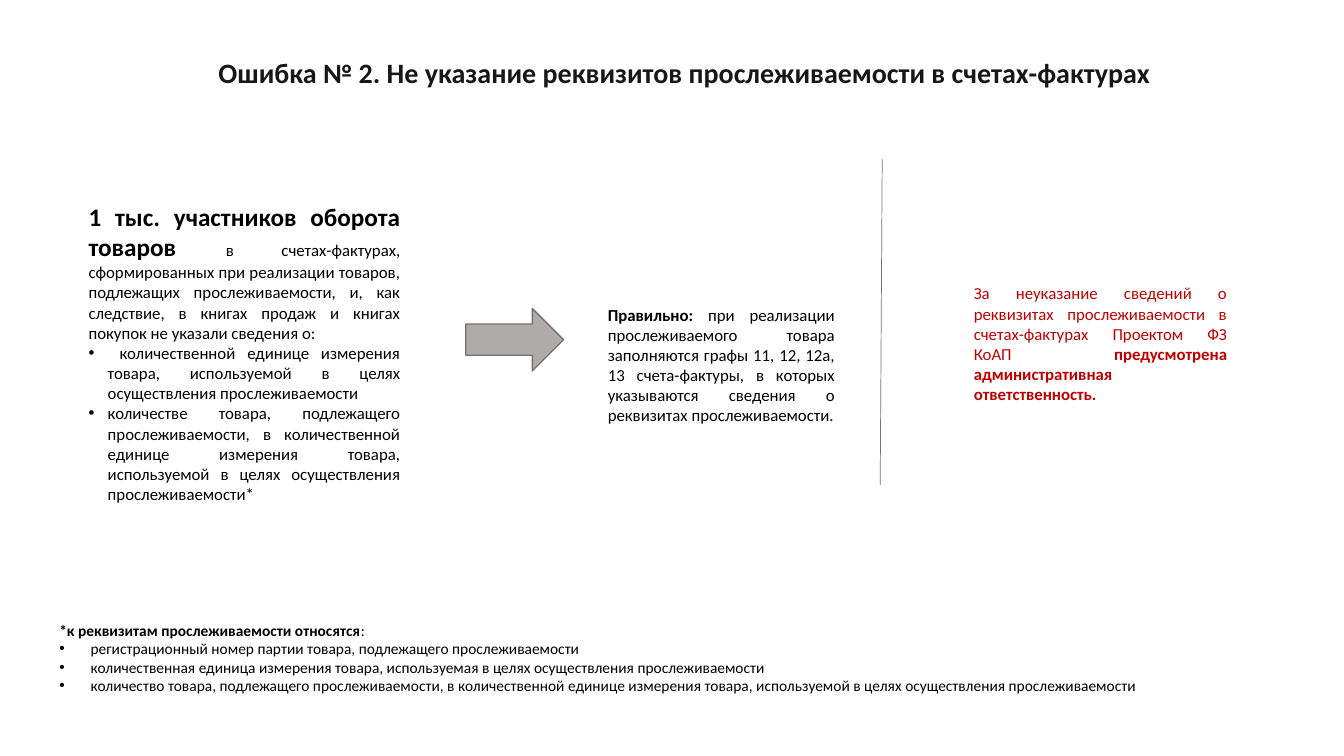
import pptx
import pptx.util
import pptx.oxml
import pptx.dml.color
import pptx.enum.text
import pptx.enum.shapes
import lxml.etree
from dataclasses import dataclass

Inches, Pt = pptx.util.Inches, pptx.util.Pt
ALIGN = pptx.enum.text.PP_ALIGN
ANCHOR = pptx.enum.text.MSO_ANCHOR


@dataclass(frozen=True)
class Theme:
    font: str = "Calibri"
    title: str = "181717"
    text: str = "000000"
    alert: str = "C00000"
    arrow: str = "AFABAB"
    line: str = "767171"
    title_size: int = 20
    lead_size: int = 18
    body_size: int = 12
    note_size: int = 11


T = Theme()

# Content: a paragraph is (bulleted, runs), a run is (text, bold, size)
TITLE = "Ошибка № 2. Не указание реквизитов прослеживаемости в счетах-фактурах"
MISTAKE = [
    (False, [("1 тыс. участников оборота товаров ", True, T.lead_size),
             ("в счетах-фактурах, сформированных при реализации товаров, подлежащих "
              "прослеживаемости, и, как следствие, в книгах продаж и книгах покупок "
              "не указали сведения о:", False, T.body_size)]),
    (True, [(" количественной единице измерения товара, используемой в целях "
             "осуществления прослеживаемости", False, T.body_size)]),
    (True, [("количестве товара, подлежащего прослеживаемости, в количественной "
             "единице измерения товара, используемой в целях осуществления "
             "прослеживаемости*", False, T.body_size)]),
]
CORRECT = [
    (False, [("Правильно:", True, T.body_size),
             (" при реализации прослеживаемого товара заполняются графы 11, 12, 12а, "
              "13 счета-фактуры, в которых указываются сведения о реквизитах "
              "прослеживаемости.", False, T.body_size)]),
]
PENALTY = [
    (False, [("За неуказание сведений о реквизитах прослеживаемости в счетах-фактурах "
              "Проектом ФЗ КоАП ", False, T.body_size),
             ("предусмотрена административная ответственность.", True, T.body_size)]),
]
DETAILS = [
    "регистрационный номер партии товара, подлежащего прослеживаемости",
    "количественная единица измерения товара, используемая в целях осуществления "
    "прослеживаемости",
    "количество товара, подлежащего прослеживаемости, в количественной единице "
    "измерения товара, используемой в целях осуществления прослеживаемости",
]
FOOTNOTE = [
    (False, [("*к реквизитам прослеживаемости относятся", True, T.note_size),
             (":", False, T.note_size)]),
] + [(True, [(text, False, T.note_size)]) for text in DETAILS]

# Box (left, top, width, height), paragraphs, colour, alignment, bullet indent
TEXTS = [
    ((0.78, 1.95, 3.29, 3.13), MISTAKE, T.text, ALIGN.JUSTIFY, 0.19),
    ((5.93, 2.97, 2.45, 1.31), CORRECT, T.text, ALIGN.JUSTIFY, 0),
    ((9.56, 2.76, 2.71, 1.31), PENALTY, T.alert, ALIGN.JUSTIFY, 0),
    ((0.49, 6.11, 11.49, 0.84), FOOTNOTE, T.text, ALIGN.LEFT, 0.31),
]
TITLE_BOX = (1.04, 0.01, 11.5, 1.45)
ARROW_BOX = (4.62, 3.06, 0.97, 0.62)
DIVIDER = (8.75, 1.58, 8.73, 4.81)


def inches(values):
    return [Inches(v) for v in values]


def rgb(color):
    return pptx.dml.color.RGBColor.from_string(color)


def set_attrs(obj, values):
    for name, value in values.items():
        setattr(obj, name, value)


def add_run(p, text, bold, size, color):
    r = p.add_run()
    r.text = text
    set_attrs(r.font, {"name": T.font, "size": Pt(size), "bold": bold})
    r.font.color.rgb = rgb(color)


def add_bullet(p, indent):
    pPr = p._p.get_or_add_pPr()
    pPr.set("marL", str(Inches(indent)))
    pPr.set("indent", str(-Inches(indent)))
    for tag, key, value in (("a:buFont", "typeface", "Arial"), ("a:buChar", "char", "•")):
        bullet = lxml.etree.SubElement(pPr, pptx.oxml.ns.qn(tag))
        bullet.set(key, value)


def add_text(slide, box, paragraphs, color, align, indent):
    tf = slide.shapes.add_textbox(*inches(box)).text_frame
    set_attrs(tf, {"word_wrap": True,
                   "auto_size": pptx.enum.text.MSO_AUTO_SIZE.SHAPE_TO_FIT_TEXT})
    for i, (bulleted, runs) in enumerate(paragraphs):
        p = tf.add_paragraph() if i else tf.paragraphs[0]
        p.alignment = align
        if bulleted:
            add_bullet(p, indent)
        for text, bold, size in runs:
            add_run(p, text, bold, size, color)


def set_line(sp, width):
    sp.line.color.rgb = rgb(T.line)
    sp.line.width = Pt(width)


def main():
    prs = pptx.Presentation()
    set_attrs(prs, {"slide_width": Inches(13.33), "slide_height": Inches(7.5)})
    slide = prs.slides.add_slide(prs.slide_layouts[5])

    # Title
    title = slide.shapes.title
    set_attrs(title, dict(zip(("left", "top", "width", "height"), inches(TITLE_BOX))))
    set_attrs(title.text_frame, {"word_wrap": True, "vertical_anchor": ANCHOR.MIDDLE})
    p = title.text_frame.paragraphs[0]
    set_attrs(p, {"alignment": ALIGN.CENTER, "line_spacing": 0.9})
    add_run(p, TITLE, True, T.title_size, T.title)

    # Three columns and the footnote
    for text in TEXTS:
        add_text(slide, *text)

    # Arrow from the mistake to the correct way
    sp = slide.shapes.add_shape(pptx.enum.shapes.MSO_SHAPE.RIGHT_ARROW, *inches(ARROW_BOX))
    sp.shadow.inherit = False
    sp.fill.solid()
    sp.fill.fore_color.rgb = rgb(T.arrow)
    set_line(sp, 1)

    # Divider before the penalty
    divider = slide.shapes.add_connector(
        pptx.enum.shapes.MSO_CONNECTOR.STRAIGHT, *inches(DIVIDER))
    set_line(divider, 0.5)
    lxml.etree.SubElement(divider._element.spPr, pptx.oxml.ns.qn("a:effectLst"))

    prs.save("out.pptx")


if __name__ == "__main__":
    main()
